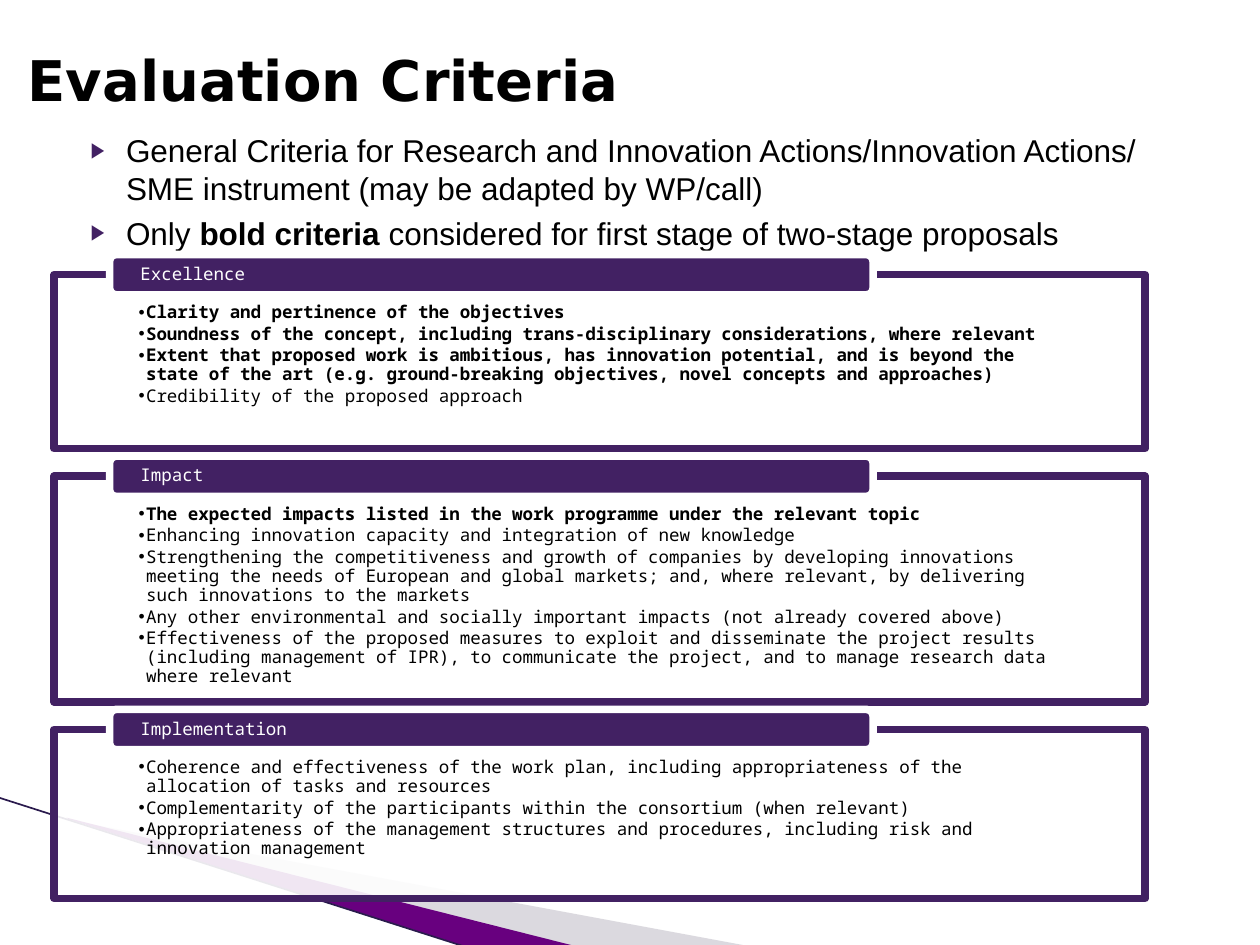
from dataclasses import dataclass

import lxml.etree
import pptx
import pptx.dml.color
import pptx.enum.shapes
import pptx.enum.text
import pptx.oxml.ns
import pptx.util
from pptx.util import Inches, Pt


@dataclass(frozen=True)
class Theme:
    purple: str = "422163"
    violet: str = "68007F"
    grey: str = "A7A2B1"
    wave_line: str = "2A1A4D"
    black: str = "000000"
    white: str = "FFFFFF"
    title_font: str = "DejaVu Sans"
    body_font: str = "Arial"
    panel_font: str = "Noto Sans Mono"
    title_size: int = 32
    body_size: int = 18
    panel_size: int = 10
    frame_width: float = 4.33


@dataclass(frozen=True)
class Panel:
    heading: str
    top: float
    height: float
    bold_items: tuple[str, ...]
    plain_items: tuple[str, ...]


THEME = Theme()
PANEL_LEFT, PANEL_WIDTH = 0.43, 8.66

PANELS = (
    Panel("Excellence", 2.18, 1.38, (
        "Clarity and pertinence of the objectives",
        "Soundness of the concept, including trans-disciplinary considerations, where relevant",
        "Extent that proposed work is ambitious, has innovation potential, and is beyond the "
        "state of the art (e.g. ground-breaking objectives, novel concepts and approaches)",
    ), ("Credibility of the proposed approach",)),
    Panel("Impact", 3.78, 1.79, (
        "The expected impacts listed in the work programme under the relevant topic",
    ), (
        "Enhancing innovation capacity and integration of new knowledge",
        "Strengthening the competitiveness and growth of companies by developing innovations "
        "meeting the needs of European and global markets; and, where relevant, by delivering "
        "such innovations to the markets",
        "Any other environmental and socially important impacts (not already covered above)",
        "Effectiveness of the proposed measures to exploit and disseminate the project results "
        "(including management of IPR), to communicate the project, and to manage research data "
        "where relevant",
    )),
    Panel("Implementation", 5.79, 1.34, (), (
        "Coherence and effectiveness of the work plan, including appropriateness of the "
        "allocation of tasks and resources",
        "Complementarity of the participants within the consortium (when relevant)",
        "Appropriateness of the management structures and procedures, including risk and "
        "innovation management",
    )),
)


def rgb(color: str) -> pptx.dml.color.RGBColor:
    return pptx.dml.color.RGBColor.from_string(color)


def add_element(parent, tag: str, **attributes: str):
    element = lxml.etree.SubElement(parent, pptx.oxml.ns.qn(tag))
    for name, value in attributes.items():
        element.set(name, value)
    return element


def fill_shape(shape, color: str, opacity: int = 100) -> None:
    shape.shadow.inherit = False
    shape.fill.solid()
    shape.fill.fore_color.rgb = rgb(color)
    if opacity < 100:
        color_element = shape.fill._xPr.find(".//" + pptx.oxml.ns.qn("a:srgbClr"))
        add_element(color_element, "a:alpha", val=str(opacity * 1000))


def outline_shape(shape, color: str) -> None:
    shape.line.color.rgb = rgb(color)
    shape.line.width = Pt(THEME.frame_width)


def style_font(font, name: str, size: float, color: str, bold: bool = False) -> None:
    font.name, font.size, font.bold = name, Pt(size), bold
    font.color.rgb = rgb(color)


def add_bullet(para, char: str, margin: float, hanging: float,
               color: str, percent: int = 100) -> None:
    properties = para._p.get_or_add_pPr()
    properties.set("marL", str(Inches(margin)))
    properties.set("indent", str(-Inches(hanging)))
    add_element(add_element(properties, "a:buClr"), "a:srgbClr", val=color)
    add_element(properties, "a:buSzPct", val=str(percent * 1000))
    add_element(properties, "a:buFont", typeface=THEME.body_font)
    add_element(properties, "a:buChar", char=char)


def place(shape, left: float, top: float, width: float, height: float) -> None:
    shape.left, shape.top = Inches(left), Inches(top)
    shape.width, shape.height = Inches(width), Inches(height)


def set_margins(frame, side: float, top: float, bottom: float) -> None:
    frame.margin_left = frame.margin_right = Inches(side)
    frame.margin_top, frame.margin_bottom = Inches(top), Inches(bottom)


def add_wave(page, points: list[tuple[float, float]], color: str, opacity: int = 100) -> None:
    corners = [(Inches(x), Inches(y)) for x, y in points]
    builder = page.shapes.build_freeform(*corners[0])
    builder.add_line_segments(corners[1:], close=True)
    wave = builder.convert_to_shape()
    fill_shape(wave, color, opacity)
    wave.line.fill.background()


def add_background(page) -> None:
    add_wave(page, [(0.55, 6.51), (5.95, 7.51), (4.56, 7.51), (0.55, 6.5)], THEME.grey, 40)
    add_wave(page, [(0.53, 6.49), (4.57, 7.51), (3.72, 7.52), (0.54, 6.5)], THEME.violet)
    edge = page.shapes.add_connector(
        pptx.enum.shapes.MSO_CONNECTOR.STRAIGHT,
        Inches(-0.01), Inches(6.33), Inches(3.71), Inches(7.52))
    edge.line.color.rgb = rgb(THEME.wave_line)
    edge.line.width = Pt(0.95)
    add_element(edge._element.spPr, "a:effectLst")


def fill_title(title) -> None:
    place(title, 0.12, 0, 7.89, 1.25)
    title.text_frame.text = "Evaluation Criteria"
    title.text_frame.vertical_anchor = pptx.enum.text.MSO_ANCHOR.MIDDLE
    para = title.text_frame.paragraphs[0]
    para.alignment = pptx.enum.text.PP_ALIGN.LEFT
    style_font(para.font, THEME.title_font, THEME.title_size, THEME.black, True)


def fill_body(body) -> None:
    place(body, 0.5, 0.99, 9, 5.58)
    frame = body.text_frame
    set_margins(frame, 0.1, 0.05, 0.05)
    points = (
        (("General Criteria for Research and Innovation Actions/Innovation Actions/ "
          "SME instrument (may be adapted by WP/call)", False),),
        (("Only ", False), ("bold criteria ", True),
         ("considered for first stage of two-stage proposals", False)),
    )
    for index, spans in enumerate(points):
        para = frame.add_paragraph() if index else frame.paragraphs[0]
        para.line_spacing = 1.0
        para.space_before = Pt(4 if index else 0)
        add_bullet(para, "▶", 0.4, 0.28, THEME.purple, 68)
        style_font(para.font, THEME.body_font, THEME.body_size, THEME.black)
        for text, bold in spans:
            span = para.add_run()
            span.text = text
            if bold:
                span.font.bold = True


def add_panel(page, panel: Panel) -> None:
    # Frame with the criteria
    box = page.shapes.add_shape(
        pptx.enum.shapes.MSO_SHAPE.RECTANGLE, Inches(PANEL_LEFT), Inches(panel.top),
        Inches(PANEL_WIDTH), Inches(panel.height))
    fill_shape(box, THEME.white, 90)
    outline_shape(box, THEME.purple)
    frame = box.text_frame
    frame.word_wrap = True
    frame.vertical_anchor = pptx.enum.text.MSO_ANCHOR.TOP
    set_margins(frame, 0.67, 0.23, 0.08)
    for index, text in enumerate(panel.bold_items + panel.plain_items):
        para = frame.add_paragraph() if index else frame.paragraphs[0]
        para.text = text
        para.level = 1
        para.alignment = pptx.enum.text.PP_ALIGN.LEFT
        para.line_spacing, para.space_after = 0.9, Pt(1.5)
        add_bullet(para, "•", 0.06, 0.06, THEME.black)
        style_font(para.font, THEME.panel_font, THEME.panel_size, THEME.black,
                   index < len(panel.bold_items))

    # Heading tab over the top edge
    tab = page.shapes.add_shape(
        pptx.enum.shapes.MSO_SHAPE.ROUNDED_RECTANGLE, Inches(0.87), Inches(panel.top - 0.16),
        Inches(6.06), Inches(0.32))
    fill_shape(tab, THEME.purple)
    outline_shape(tab, THEME.white)
    set_margins(tab.text_frame, 0.23, 0, 0)
    tab.text_frame.text = panel.heading
    para = tab.text_frame.paragraphs[0]
    para.alignment = pptx.enum.text.PP_ALIGN.LEFT
    para.line_spacing = 0.9
    style_font(para.font, THEME.panel_font, THEME.panel_size, THEME.white)


def main() -> None:
    deck = pptx.Presentation()
    deck.slide_width, deck.slide_height = Inches(10), Inches(7.5)
    page = deck.slides.add_slide(deck.slide_layouts[1])
    title, body = page.shapes.title, page.placeholders[1]
    add_background(page)
    # Bring the placeholders in front of the waves
    for holder in (body, title):
        page.shapes._spTree.append(holder._element)
    fill_body(body)
    fill_title(title)
    for panel in PANELS:
        add_panel(page, panel)
    deck.save("out.pptx")


if __name__ == "__main__":
    main()
